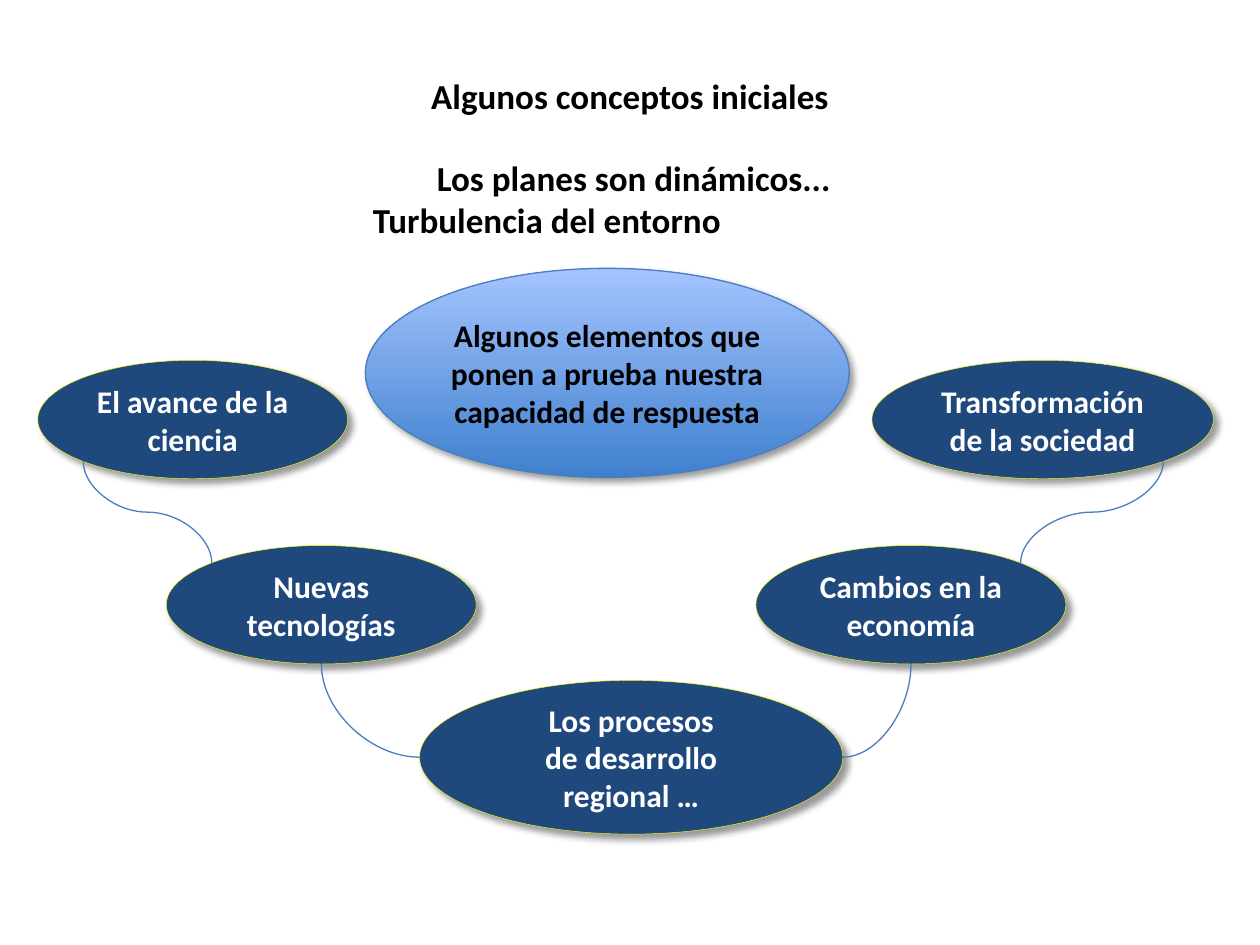
from dataclasses import dataclass
from math import sqrt

from lxml.etree import SubElement
from pptx import Presentation
from pptx.dml.color import RGBColor
from pptx.enum.shapes import MSO_CONNECTOR, MSO_SHAPE
from pptx.enum.text import MSO_ANCHOR, MSO_AUTO_SIZE, PP_ALIGN
from pptx.oxml.ns import qn
from pptx.util import Inches, Pt

COLORS = {
    "navy": "1F497D",
    "yellow": "FFFF00",
    "line": "4B7EBC",
    "grad_low": "3F80CE",
    "grad_high": "A4C4FF",
    "black": "000000",
    "white": "FFFFFF",
}


@dataclass
class Oval:
    text: str
    left: float
    top: float
    width: float = 2.46
    height: float = 0.94

    def site(self, dx: float, dy: float) -> tuple[float, float]:
        """Return the outline point in direction (dx, dy) from the centre."""
        norm = sqrt(dx * dx + dy * dy)
        return (
            self.left + self.width / 2 * (1 + dx / norm),
            self.top + self.height / 2 * (1 + dy / norm),
        )


def rgb(name: str) -> RGBColor:
    """Return the named colour."""
    return RGBColor.from_string(COLORS[name])


def write(tf, text: str, size: int = 18, color: str = "black", align=PP_ALIGN.CENTER) -> None:
    """Fill a text frame with one bold paragraph per line of text."""
    tf.word_wrap = True
    tf.auto_size = MSO_AUTO_SIZE.NONE
    tf.vertical_anchor = MSO_ANCHOR.MIDDLE
    for i, line in enumerate(text.split("\n")):
        p = tf.paragraphs[0] if i == 0 else tf.add_paragraph()
        p.alignment = align
        r = p.add_run()
        r.text = line
        r.font.name = "Calibri"
        r.font.size = Pt(size)
        r.font.bold = True
        r.font.color.rgb = rgb(color)


def add_shadow(sp, dist: float) -> None:
    """Give a shape a soft black shadow towards the lower right."""
    sp.shadow.inherit = False
    effects = sp._element.spPr.find(qn("a:effectLst"))
    shadow = SubElement(
        effects, qn("a:outerShdw"), blurRad=str(Pt(4)), dist=str(Pt(dist)),
        dir="2700000", algn="tl", rotWithShape="0",
    )
    clr = SubElement(shadow, qn("a:srgbClr"), val=COLORS["black"])
    SubElement(clr, qn("a:alpha"), val="40000")


def add_oval(s, oval: Oval, color: str, line: str, weight: float, dist: float):
    """Draw an ellipse with its centred text and return it."""
    box = (Inches(v) for v in (oval.left, oval.top, oval.width, oval.height))
    sp = s.shapes.add_shape(MSO_SHAPE.OVAL, *box)
    sp.fill.solid()
    sp.fill.fore_color.rgb = rgb("navy")
    sp.line.color.rgb = rgb(line)
    sp.line.width = Pt(weight)
    add_shadow(sp, dist)
    write(sp.text_frame, oval.text, color=color)
    return sp


def add_curve(s, start: tuple[float, float], end: tuple[float, float], preset: str) -> None:
    """Draw a curve that leaves its upper end vertically, as a turned connector."""
    (x1, y1), (x2, y2) = start, end
    cx, cy = (x1 + x2) / 2, (y1 + y2) / 2
    side = 1 if x2 > x1 else -1
    half_w, half_h = side * (y2 - y1) / 2, abs(x2 - x1) / 2
    ends = (cx + half_w, cy - half_h, cx - half_w, cy + half_h)
    cn = s.shapes.add_connector(MSO_CONNECTOR.CURVE, *(Inches(v) for v in ends))
    spPr = cn._element.spPr
    spPr.find(qn("a:xfrm")).set("rot", str((270 if side > 0 else 90) * 60000))
    spPr.find(qn("a:prstGeom")).set("prst", preset)
    cn.line.color.rgb = rgb("line")
    cn.line.width = Pt(0.75)
    SubElement(spPr, qn("a:effectLst"))


def main() -> None:
    """Build the slide and save it."""
    prs = Presentation()
    prs.slide_width, prs.slide_height = Inches(10), Inches(7.5)
    s = prs.slides.add_slide(prs.slide_layouts[5])

    title = s.shapes.title
    title.left, title.top = Inches(1.01), Inches(0.54)
    title.width, title.height = Inches(7.98), Inches(0.44)
    write(title.text_frame, "Algunos conceptos iniciales", size=20)

    sub = s.shapes.add_textbox(Inches(1.17), Inches(1.19), Inches(7.72), Inches(0.77))
    write(sub.text_frame, "Los planes son dinámicos...\nTurbulencia del entorno", size=20)
    p = sub.text_frame.paragraphs[1]
    p.alignment = PP_ALIGN.LEFT
    p._p.get_or_add_pPr().set("marL", str(Inches(1.69)))

    science = Oval("El avance de la ciencia", 0.3, 2.86)
    tech = Oval("Nuevas tecnologías", 1.32, 4.33)
    society = Oval("Transformación de la sociedad", 6.92, 2.86, width=2.71)
    economy = Oval("Cambios en la economía", 6, 4.33)
    region = Oval("Los procesos\nde desarrollo regional …", 3.33, 5.4, 3.36, 1.22)
    for oval in (science, tech, society, economy, region):
        add_oval(s, oval, "white", "yellow", 0.25, 4)

    for outer, inner, side in ((science, tech, -1), (society, economy, 1)):
        add_curve(s, outer.site(side, 1), inner.site(side, -1), "curvedConnector3")
        add_curve(s, inner.site(0, 1), region.site(side, 0), "curvedConnector2")

    core = Oval("Algunos elementos que ponen a prueba nuestra capacidad de respuesta",
                2.9, 2.13, 3.84, 1.66)
    fill = add_oval(s, core, "black", "line", 0.75, 3).fill
    fill.gradient()
    fill.gradient_angle = 90
    for stop, name, pos in zip(fill.gradient_stops, ("grad_low", "grad_high"), (0, 1)):
        stop.color.rgb = rgb(name)
        stop.position = pos

    prs.save("out.pptx")


if __name__ == "__main__":
    main()
